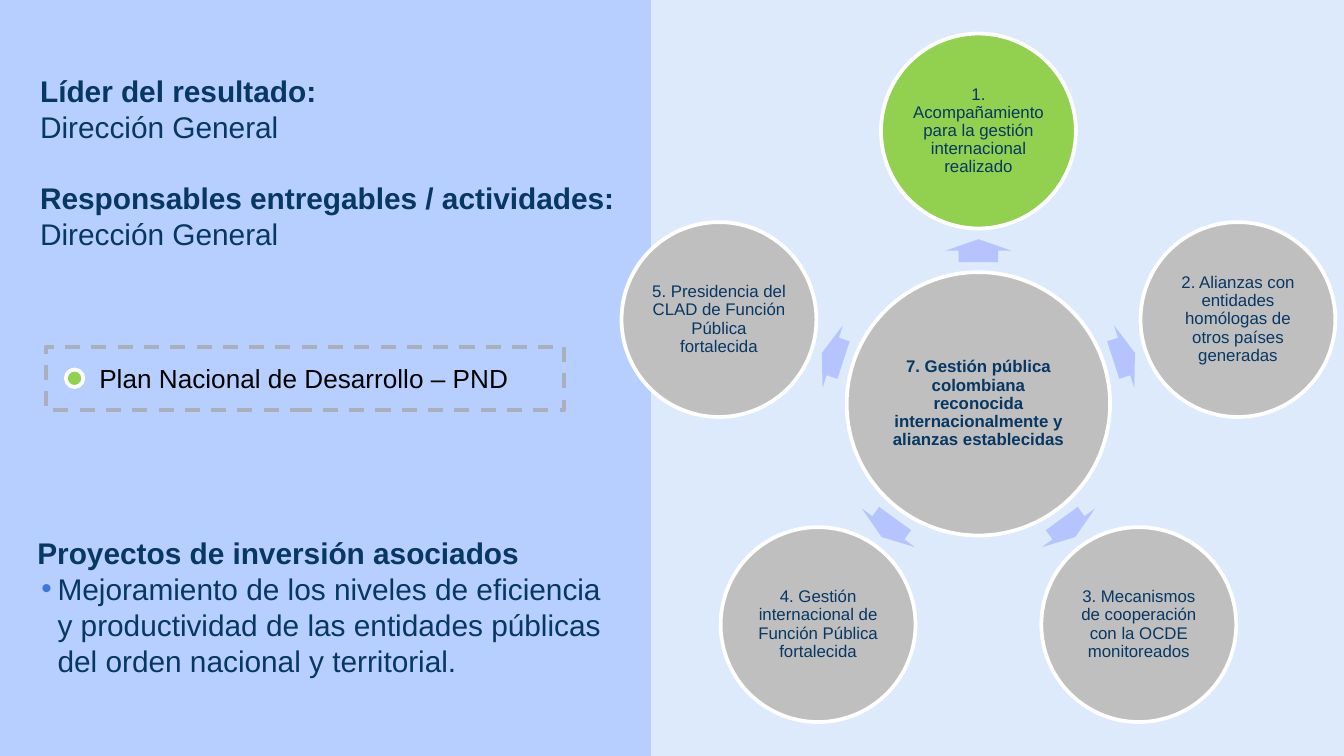
from math import cos, radians, sin

from lxml.etree import SubElement
from pptx import Presentation
from pptx.dml.color import RGBColor
from pptx.enum.dml import MSO_LINE
from pptx.enum.shapes import MSO_SHAPE as Shape
from pptx.enum.text import MSO_ANCHOR, PP_ALIGN
from pptx.oxml.ns import qn
from pptx.util import Inches, Pt

SLIDE_WIDTH = 10
SLIDE_HEIGHT = SLIDE_WIDTH * 9 / 16
COLORS = {
    "background": "DCEAFB", "panel": "B7CFFF", "navy": "073763",
    "gray": "BFBFBF", "green": "92D050", "arrow": "B5C4FF",
    "white": "FFFFFF", "dash": "A9AFBC", "bullet": "3C78D8", "black": "000000",
}
CENTER_TEXT = ("7. Gestión pública colombiana reconocida internacionalmente "
               "y alianzas establecidas")
RESULTS = [
    ("1. Acompañamiento para la gestión internacional realizado", "green"),
    ("2. Alianzas con entidades homólogas de otros países generadas", "gray"),
    ("3. Mecanismos de cooperación con la OCDE monitoreados", "gray"),
    ("4. Gestión internacional de Función Pública fortalecida", "gray"),
    ("5. Presidencia del CLAD de Función Pública fortalecida", "gray"),
]
LEADERS = [
    ("Líder del resultado:", True),
    ("Dirección General", False),
    ("Responsables entregables / actividades:", True),
    ("Dirección General", False),
]
PROJECTS = [
    ("Proyectos de inversión asociados", True),
    ("Mejoramiento de los niveles de eficiencia y productividad de las "
     "entidades públicas del orden nacional y territorial.", False),
]


def color(name):
    return RGBColor.from_string(COLORS[name])


def add_shape(slide, kind, box, fill=None, line=None):
    shape = slide.shapes.add_shape(kind, *map(Inches, box))
    shape.shadow.inherit = False
    if fill:
        shape.fill.solid()
        shape.fill.fore_color.rgb = color(fill)
    else:
        shape.fill.background()
    if line:
        shape.line.color.rgb = color(line)
        shape.line.width = Pt(2)
    else:
        shape.line.fill.background()
    return shape


def set_font(paragraph, size, name="navy", bold=False):
    font = paragraph.font
    font.name, font.size, font.bold = "Arial", Pt(size), bold
    font.color.rgb = color(name)


def add_text(slide, box, lines, size=16, name="navy"):
    frame = slide.shapes.add_textbox(*map(Inches, box)).text_frame
    frame.word_wrap = True
    for index, (text, bold) in enumerate(lines):
        paragraph = frame.paragraphs[0] if index == 0 else frame.add_paragraph()
        paragraph.text = text
        set_font(paragraph, size, name, bold)
    return frame.paragraphs


def add_bullet(paragraph):
    properties = paragraph._p.get_or_add_pPr()
    properties.set("marL", str(Inches(0.15)))
    properties.set("indent", str(Inches(-0.12)))
    bullet_color = SubElement(properties, qn("a:buClr"))
    SubElement(bullet_color, qn("a:srgbClr"), val=COLORS["bullet"])
    SubElement(properties, qn("a:buFont"), typeface="Arial")
    SubElement(properties, qn("a:buChar"), char="•")


def add_circle(slide, x, y, diameter, text, fill, bold=False):
    box = (x - diameter / 2, y - diameter / 2, diameter, diameter)
    frame = add_shape(slide, Shape.OVAL, box, fill, "white").text_frame
    frame.word_wrap = True
    frame.vertical_anchor = MSO_ANCHOR.MIDDLE
    frame.margin_left = frame.margin_right = Inches(0.01)
    frame.margin_top = frame.margin_bottom = Inches(0.01)
    paragraph = frame.paragraphs[0]
    paragraph.text = text
    paragraph.alignment = PP_ALIGN.CENTER
    paragraph.line_spacing = 0.9
    set_font(paragraph, 9, bold=bold)


def add_arrow(slide, x, y, angle):
    width, height = 0.17, 0.49
    box = (x - width / 2, y - height / 2, width, height)
    arrow = add_shape(slide, Shape.RIGHT_ARROW, box, "arrow")
    arrow.adjustments[0] = 0.6
    arrow.adjustments[1] = 0.5
    arrow.rotation = angle % 360


def add_radial_diagram(slide, box):
    left, top, width, height = box
    orbit, arrow_orbit, node = 2.03, 1.14, 1.45
    x, y = left + width / 2, top + node / 2 + orbit
    add_circle(slide, x, y, 1.96, CENTER_TEXT, "gray", True)
    for index, (text, fill) in enumerate(RESULTS):
        angle = -90 + index * 360 / len(RESULTS)
        dx, dy = cos(radians(angle)), sin(radians(angle))
        add_arrow(slide, x + arrow_orbit * dx, y + arrow_orbit * dy, angle)
        add_circle(slide, x + orbit * dx, y + orbit * dy, node, text, fill)


def add_legend(slide, box):
    left, top, width, height = box
    frame = add_shape(slide, Shape.RECTANGLE, box, line="dash")
    frame.line.dash_style = MSO_LINE.DASH
    add_text(slide, (left + 0.3, top + 0.07, width - 0.24, 0.34),
             [("Plan Nacional de Desarrollo – PND", False)], 14, "black")
    add_shape(slide, Shape.OVAL, (left + 0.15, top + 0.17, 0.13, 0.13),
              "green", "white")


def add_information(slide, box):
    left, top, width, height = box
    leaders = add_text(slide, (left + 0.21, top + 0.49, 5.05, 1.45), LEADERS)
    leaders[2].space_before = Pt(19)
    projects = add_text(slide, (left + 0.19, top + 3.93, 4.39, 1.45), PROJECTS)
    projects[1].alignment = PP_ALIGN.JUSTIFY
    add_bullet(projects[1])
    set_font(projects[1], 16)
    add_legend(slide, (left + 0.35, top + 2.58, 3.86, 0.47))


def main():
    presentation = Presentation()
    presentation.slide_width = Inches(SLIDE_WIDTH)
    presentation.slide_height = Inches(SLIDE_HEIGHT)
    slide = presentation.slides.add_slide(presentation.slide_layouts[6])
    slide.background.fill.solid()
    slide.background.fill.fore_color.rgb = color("background")
    panel = (-0.01, 0, 4.84, SLIDE_HEIGHT)
    add_shape(slide, Shape.RECTANGLE, panel, "panel", "panel")
    add_radial_diagram(slide, (4.62, 0.25, 5.32, 5.12))
    add_information(slide, panel)
    presentation.save("out.pptx")


if __name__ == "__main__":
    main()
